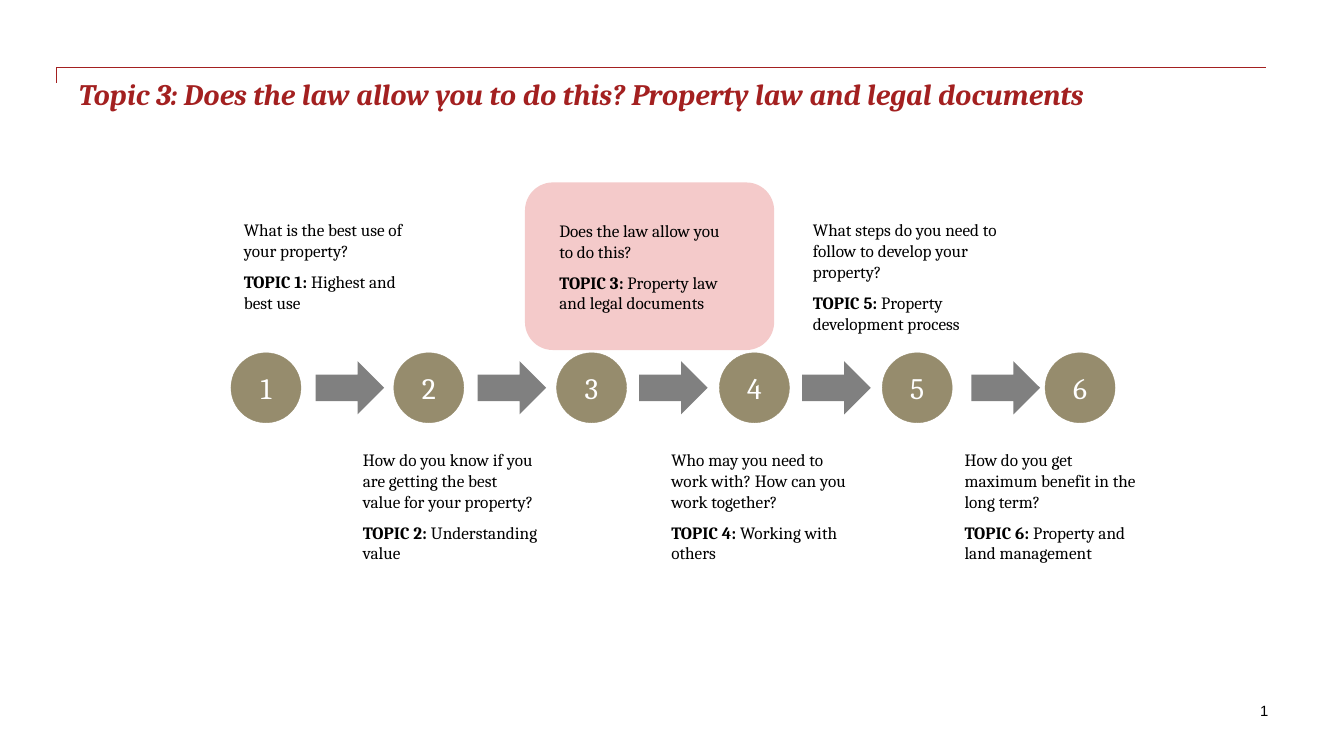
from pptx import Presentation
from pptx.dml.color import RGBColor
from pptx.enum import shapes as kinds, text as txt
from pptx.oxml import parse_xml
from pptx.oxml.ns import nsdecls
from pptx.util import Pt

RED = RGBColor(0xA3, 0x20, 0x20)
PINK = RGBColor(0xEA, 0x96, 0x96)
TAN = RGBColor(0x96, 0x8C, 0x6D)
GREY = RGBColor(0x80, 0x80, 0x80)
BLACK = RGBColor(0, 0, 0)
WHITE = RGBColor(0xFF, 0xFF, 0xFF)
SERIF = "Cambria"
KIND = kinds.MSO_SHAPE

TOPICS = [
    ("What is the best use of your property?", "Highest and best use", 174.2, 157, 125.3),
    ("How do you know if you are getting the best value for your property?",
     "Understanding value", 259.2, 321.1, 125.3),
    ("Does the law allow you to do this?", "Property law and legal documents",
     399.6, 157.3, 125.3),
    ("Who may you need to work with? How can you work together?",
     "Working with others", 479.5, 321.1, 125.3),
    ("What steps do you need to follow to develop your property?",
     "Property development process", 580.7, 157, 134.6),
    ("How do you get maximum benefit in the long term?",
     "Property and land management", 689, 321.1, 125.3),
]
ARROWS = [225.4, 341.1, 456.5, 573, 693.9]


def write(par, words, size, color, font=SERIF, bold=False, italic=False):
    """Add one formatted run to a paragraph."""
    run = par.add_run()
    run.text = words
    face = run.font
    face.name, face.size, face.bold, face.italic = font, Pt(size), bold, italic
    face.color.rgb = color


def frame(shape, inset=0, anchor=txt.MSO_ANCHOR.TOP):
    """Set wrapping, insets and anchor, and return the text frame."""
    tf = shape.text_frame
    tf.word_wrap = True
    tf.auto_size = txt.MSO_AUTO_SIZE.NONE
    tf.vertical_anchor = anchor
    tf.margin_left = tf.margin_right = Pt(inset)
    tf.margin_top = tf.margin_bottom = Pt(inset / 2)
    return tf


def solid(slide, kind, box, color):
    """Add a flat filled shape without an outline."""
    shape = slide.shapes.add_shape(kind, *map(Pt, box))
    shape.shadow.inherit = False
    shape.fill.solid()
    shape.fill.fore_color.rgb = color
    shape.line.fill.background()
    return shape


def header(slide, x, y, w):
    """Draw the bracket rule and the title beneath it."""
    pen = slide.shapes.build_freeform(Pt(x), Pt(y + 11))
    pen.add_line_segments([(Pt(x), Pt(y)), (Pt(x + w), Pt(y))], close=False)
    rule = pen.convert_to_shape()
    rule.shadow.inherit = False
    rule.fill.background()
    rule.line.color.rgb = RED
    rule.line.width = Pt(1)
    title = slide.shapes.title
    title.left, title.top = Pt(x + 16), Pt(y + 5.8)
    title.width, title.height = Pt(w - 16), Pt(72)
    par = frame(title).paragraphs[0]
    par.alignment = txt.PP_ALIGN.LEFT
    write(par, "Topic 3: Does the law allow you to do this? "
          "Property law and legal documents", 21.2, RED, bold=True, italic=True)


def focus(slide, x, y, w, h):
    """Draw the translucent panel behind the current topic."""
    panel = solid(slide, KIND.ROUNDED_RECTANGLE, (x, y, w, h), PINK)
    tint = panel.fill.fore_color._xFill[0]
    tint.append(parse_xml(f'<a:alpha {nsdecls("a")} val="50000"/>'))


def steps(slide, x, y, pitch, size):
    """Draw the numbered circles and the arrows between them."""
    for i in range(len(TOPICS)):
        disc = solid(slide, KIND.OVAL, (x + i * pitch, y, size, size), TAN)
        disc.line.color.rgb = TAN
        disc.line.width = Pt(0.25)
        par = frame(disc, 7.2, txt.MSO_ANCHOR.MIDDLE).paragraphs[0]
        par.alignment = txt.PP_ALIGN.CENTER
        write(par, str(i + 1), 21.2, WHITE)
    for left in ARROWS:
        solid(slide, KIND.RIGHT_ARROW, (left, y + 6, 49, 38), GREY)


def topic(slide, num, ask, name, x, y, w):
    """Write one question with its topic line."""
    tf = frame(slide.shapes.add_textbox(Pt(x), Pt(y), Pt(w), Pt(88)))
    top, low = tf.paragraphs[0], tf.add_paragraph()
    top.space_after = low.space_after = Pt(7.5)
    write(top, ask, 12.3, BLACK)
    write(low, f"TOPIC {num}: ", 12.3, BLACK, bold=True)
    write(low, name, 12.3, BLACK)


def footer(slide, x, y, w, h):
    """Write the page number at the right."""
    box = slide.shapes.add_textbox(Pt(x), Pt(y), Pt(w), Pt(h))
    par = frame(box, 7.2, txt.MSO_ANCHOR.MIDDLE).paragraphs[0]
    par.alignment = txt.PP_ALIGN.RIGHT
    write(par, "1", 10.6, BLACK, "Arial")


def main():
    """Build and save the slide."""
    deck = Presentation()
    deck.slide_width, deck.slide_height = Pt(960), Pt(540)
    slide = deck.slides.add_slide(deck.slide_layouts[5])
    header(slide, 40.2, 48.2, 864)
    focus(slide, 375, 130.3, 178, 119.7)
    steps(slide, 165, 252, 116.3, 50)
    for num, item in enumerate(TOPICS, 1):
        topic(slide, num, *item)
    footer(slide, 651, 495, 262, 25)
    deck.save("out.pptx")


if __name__ == "__main__":
    main()
